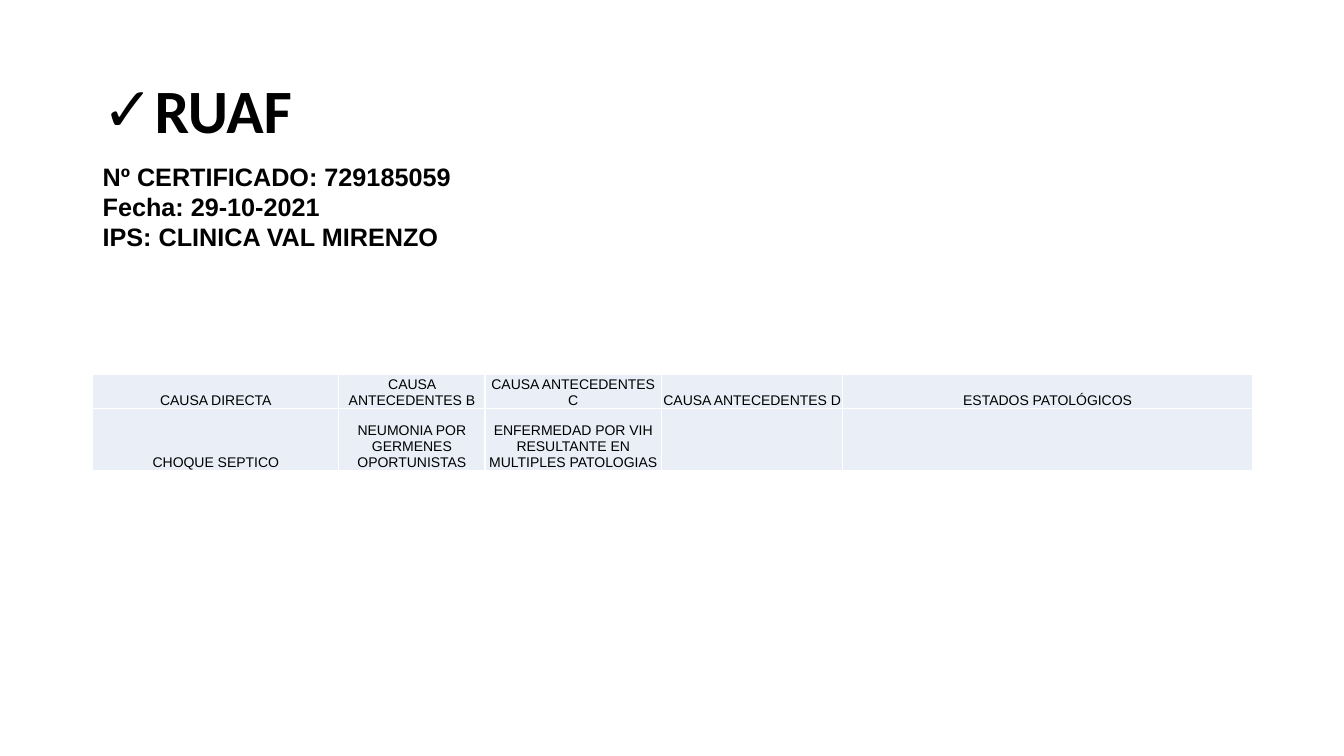
import pptx
import pptx.util
import pptx.dml.color
import pptx.enum.text
import pptx.oxml

Inches, Pt = pptx.util.Inches, pptx.util.Pt
Align = pptx.enum.text.PP_ALIGN
Anchor = pptx.enum.text.MSO_ANCHOR
Size = pptx.enum.text.MSO_AUTO_SIZE
Color = pptx.dml.color.RGBColor.from_string
HUES = {"ink": "000000", "cell": "EAEFF7", "rule": "FFFFFF"}
NS = 'xmlns:a="http://schemas.openxmlformats.org/drawingml/2006/main"'


def apply(item, form):
    for name, value in form.items():
        setattr(item, name, value)


def write(para, text, form):
    run = para.add_run()
    run.text = text
    apply(run.font, form)
    run.font.color.rgb = Color(HUES["ink"])


deck = pptx.Presentation()
apply(deck, {"slide_width": Inches(13.33), "slide_height": Inches(7.5)})
slide = deck.slides.add_slide(deck.slide_layouts[5])
left, wide = Inches(0.92), Inches(11.5)

title = slide.shapes.title
apply(title, {"left": left, "top": Inches(0.4), "width": wide, "height": Inches(1.45)})
apply(title.text_frame, {"auto_size": Size.NONE, "vertical_anchor": Anchor.MIDDLE})
head = title.text_frame.paragraphs[0]
apply(head, {"alignment": Align.LEFT, "line_spacing": 0.9})
write(head, "RUAF", {"name": "Calibri", "size": Pt(44), "bold": True})
props = head._p.get_or_add_pPr()
props.set("marL", str(Inches(0.31)))
props.set("indent", str(-Inches(0.31)))
for mark in ('buFont {} typeface="Arial"', 'buChar {} char="✓"'):
    props.append(pptx.oxml.parse_xml(f"<a:{mark.format(NS)}/>"))

facts = ["Nº CERTIFICADO: 729185059", "Fecha: 29-10-2021", "IPS: CLINICA VAL MIRENZO"]
frame = slide.shapes.add_textbox(left, Inches(1.55), Inches(9.5), Inches(1.01)).text_frame
apply(frame, {"word_wrap": True, "auto_size": Size.SHAPE_TO_FIT_TEXT})
for i, fact in enumerate(facts):
    para = frame.add_paragraph() if i else frame.paragraphs[0]
    write(para, fact, {"name": "Arial", "size": Pt(18), "bold": True})

rows = [
    ["CAUSA DIRECTA", "CAUSA ANTECEDENTES B", "CAUSA ANTECEDENTES C",
     "CAUSA ANTECEDENTES D", "ESTADOS PATOLÓGICOS"],
    ["CHOQUE SEPTICO", "NEUMONIA POR GERMENES OPORTUNISTAS",
     "ENFERMEDAD POR VIH RESULTANTE EN MULTIPLES PATOLOGIAS", "", ""],
]
grid = slide.shapes.add_table(2, 5, left, Inches(3.71), wide, Inches(0.95)).table
apply(grid, {"first_row": False, "horz_banding": False})
for col, span in zip(grid.columns, [2.44, 1.45, 1.75, 1.8, 4.06]):
    col.width = Inches(span)
for row, tall in zip(grid.rows, [0.34, 0.61]):
    row.height = Inches(tall)

inset = Inches(0.01)
look = {"vertical_anchor": Anchor.BOTTOM, "margin_left": inset, "margin_right": inset,
        "margin_top": inset, "margin_bottom": 0}
for r, texts in enumerate(rows):
    for c, text in enumerate(texts):
        cell = grid.cell(r, c)
        apply(cell, look)
        cell.fill.solid()
        cell.fill.fore_color.rgb = Color(HUES["cell"])
        para = cell.text_frame.paragraphs[0]
        apply(para, {"alignment": Align.CENTER})
        apply(para.font, {"size": Pt(10)})
        if text:
            write(para, text, {"name": "Arial", "size": Pt(10)})
        for i, side in enumerate("LRTB"):
            line = (f'<a:ln{side} {NS} w="{Pt(1)}"><a:solidFill>'
                    f'<a:srgbClr val="{HUES["rule"]}"/></a:solidFill></a:ln{side}>')
            cell._tc.get_or_add_tcPr().insert(i, pptx.oxml.parse_xml(line))

deck.save("out.pptx")
